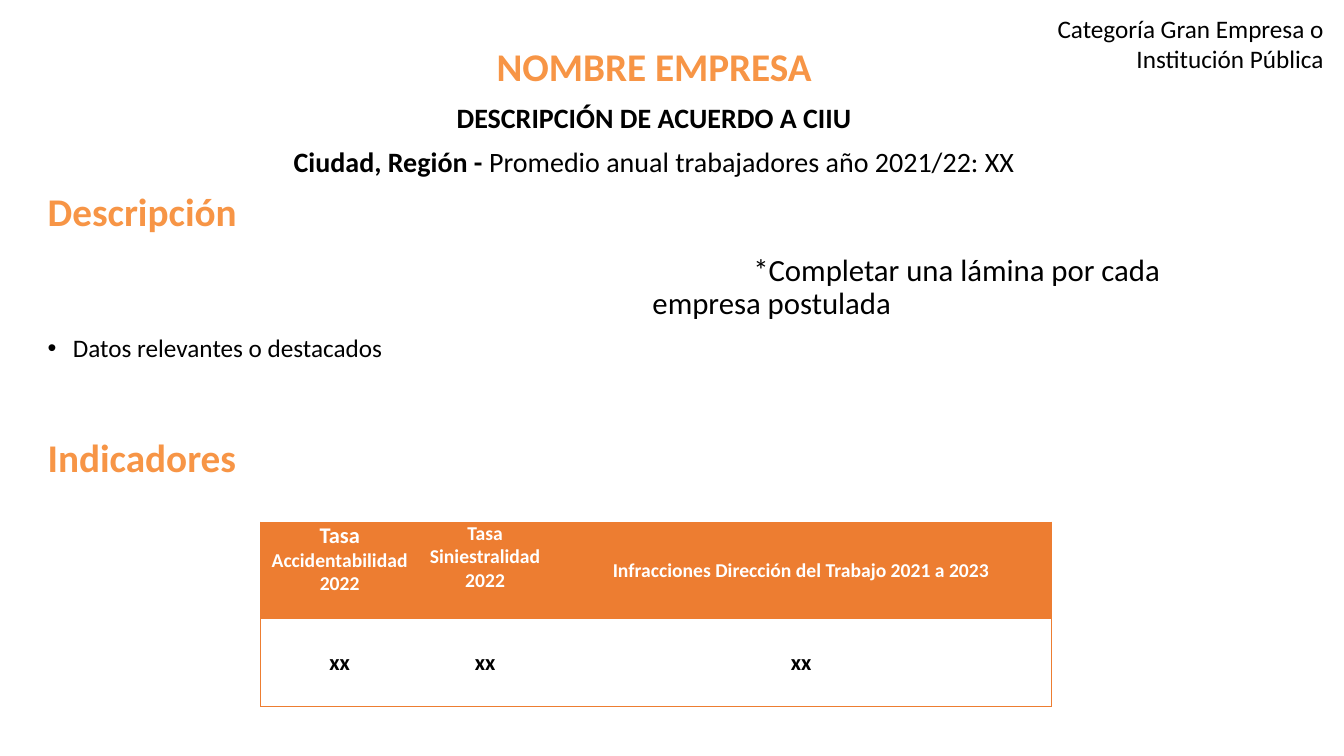
from dataclasses import dataclass

from lxml.etree import SubElement
from pptx import Presentation
from pptx.dml.color import RGBColor
from pptx.enum.text import MSO_ANCHOR, PP_ALIGN
from pptx.oxml.ns import qn
from pptx.util import Emu, Pt

EMU_PER_PX = 9525  # 96 px to the inch
ORANGE = RGBColor(0xF7, 0x95, 0x46)
TABLE_ORANGE = RGBColor(0xED, 0x7D, 0x31)
BLACK = RGBColor(0, 0, 0)
WHITE = RGBColor(0xFF, 0xFF, 0xFF)
FONT = "Calibri"


@dataclass(frozen=True)
class Span:
    text: str
    size: float
    bold: bool = False
    color: RGBColor = BLACK


@dataclass(frozen=True)
class Paragraph:
    spans: tuple[Span, ...]
    align: PP_ALIGN = PP_ALIGN.LEFT
    before: float = 10
    line: float = 0.9
    margin: int = 0
    indent: int = 0
    bullet: bool = False


@dataclass(frozen=True)
class Column:
    width: int
    header: tuple[Span, ...]
    anchor: MSO_ANCHOR
    value: str = "xx"


def px(length: int) -> Emu:
    return Emu(length * EMU_PER_PX)


def heading(text: str, align: PP_ALIGN = PP_ALIGN.LEFT, before: float = 10) -> Paragraph:
    return Paragraph((Span(text, 28, True, ORANGE),), align, before)


def header_span(text: str, size: float = 14) -> Span:
    return Span(text, size, True, WHITE)


def write_paragraphs(frame, paragraphs: tuple[Paragraph, ...]) -> None:
    for number, item in enumerate(paragraphs):
        para = frame.paragraphs[0] if number == 0 else frame.add_paragraph()
        para.alignment = item.align
        para.space_before = Pt(item.before)
        para.line_spacing = item.line
        properties = para._p.get_or_add_pPr()
        properties.set("marL", str(px(item.margin)))
        properties.set("indent", str(px(item.indent)))
        if item.bullet:
            SubElement(properties, qn("a:buFont")).set("typeface", "Arial")
            SubElement(properties, qn("a:buChar")).set("char", "•")
        for number_in_line, span in enumerate(item.spans):
            for part, text in enumerate(span.text.split("\n")):
                if part:
                    para.add_line_break()
                run = para.add_run()
                run.text = text
                run.font.name = FONT
                run.font.size = Pt(span.size)
                run.font.bold = span.bold
                run.font.color.rgb = span.color


def add_text(page, left: int, top: int, width: int, height: int,
             paragraphs: tuple[Paragraph, ...]) -> None:
    box = page.shapes.add_textbox(px(left), px(top), px(width), px(height))
    box.text_frame.word_wrap = True
    write_paragraphs(box.text_frame, paragraphs)


def set_borders(cell, visible: set[str]) -> None:
    properties = cell._tc.get_or_add_tcPr()
    for position, side in enumerate(("L", "R", "T", "B")):
        line = properties.makeelement(qn(f"a:ln{side}"), {"w": str(Pt(0.5))})
        properties.insert(position, line)
        if side in visible:
            fill = SubElement(line, qn("a:solidFill"))
            SubElement(fill, qn("a:srgbClr")).set("val", str(TABLE_ORANGE))
        else:
            SubElement(line, qn("a:noFill"))


def fill_cell(cell, spans: tuple[Span, ...], anchor: MSO_ANCHOR,
              background: RGBColor, borders: set[str]) -> None:
    cell.margin_left = cell.margin_right = cell.margin_top = cell.margin_bottom = 0
    cell.vertical_anchor = anchor
    cell.fill.solid()
    cell.fill.fore_color.rgb = background
    write_paragraphs(cell.text_frame, (Paragraph(spans, PP_ALIGN.CENTER, 0, 0.98),))
    set_borders(cell, borders)


def add_indicators(page, left: int, top: int, columns: tuple[Column, ...],
                   heights: tuple[int, int]) -> None:
    width = sum(column.width for column in columns)
    table = page.shapes.add_table(len(heights), len(columns), px(left), px(top),
                                  px(width), px(sum(heights))).table
    for row, height in zip(table.rows, heights):
        row.height = px(height)
    for index, column in enumerate(columns):
        table.columns[index].width = px(column.width)
        sides = {"T", "B"}
        if index == 0:
            sides.add("L")
        if index == len(columns) - 1:
            sides.add("R")
        fill_cell(table.cell(0, index), column.header, column.anchor, TABLE_ORANGE, sides)
        fill_cell(table.cell(1, index), (Span(column.value, 16, True),),
                  MSO_ANCHOR.MIDDLE, WHITE, sides)


BODY = (
    heading("NOMBRE EMPRESA", PP_ALIGN.CENTER),
    Paragraph((Span("DESCRIPCIÓN DE ACUERDO A CIIU", 20, True),), PP_ALIGN.CENTER),
    Paragraph((Span("Ciudad, Región - ", 20, True),
               Span("Promedio anual trabajadores año 2021/22: XX", 20)), PP_ALIGN.CENTER),
    heading("Descripción"),
    Paragraph((Span("*Completar una lámina por cada\nempresa postulada", 22),),
              before=14, margin=576, indent=96),
    Paragraph((Span("Datos relevantes o destacados", 18),),
              margin=24, indent=-24, bullet=True),
    heading("Indicadores", before=54),
)
CATEGORY = (
    Paragraph((Span("Categoría Gran Empresa o Institución Pública", 18),),
              PP_ALIGN.RIGHT, 0, 1.0),
)
COLUMNS = (
    Column(151, (header_span("Tasa ", 16), header_span("Accidentabilidad 2022")),
           MSO_ANCHOR.TOP),
    Column(126, (header_span("Tasa Siniestralidad 2022"),), MSO_ANCHOR.TOP),
    Column(476, (header_span("Infracciones Dirección del Trabajo 2021 a 2023"),),
           MSO_ANCHOR.MIDDLE),
)


def main() -> None:
    deck = Presentation()
    deck.slide_width, deck.slide_height = px(1280), px(720)
    page = deck.slides.add_slide(deck.slide_layouts[6])

    # Company description and section headings
    add_text(page, 36, 41, 1174, 645, BODY)
    # Award category in the top right corner
    add_text(page, 988, 8, 282, 68, CATEGORY)
    # Indicator table
    add_indicators(page, 248, 497, COLUMNS, (92, 84))

    deck.save("out.pptx")


if __name__ == "__main__":
    main()
